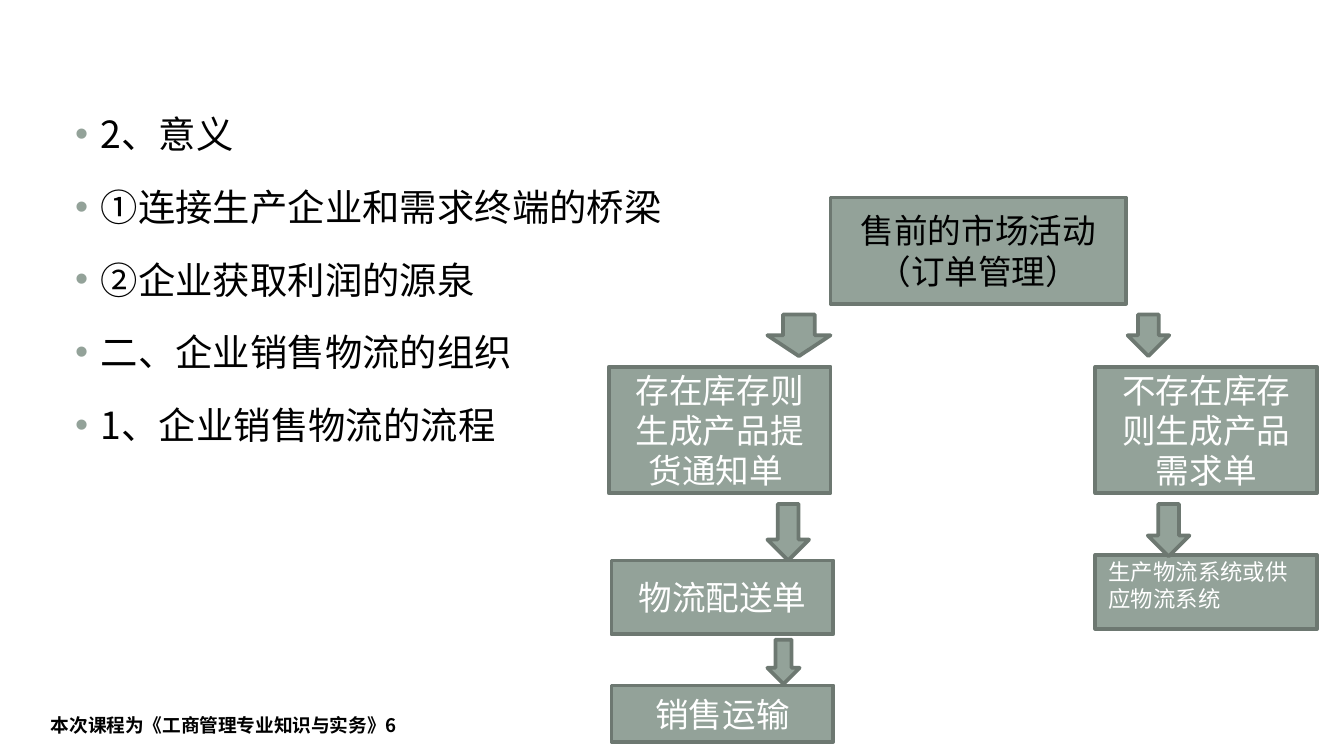
from dataclasses import dataclass

import lxml.etree
import pptx
import pptx.dml.color
import pptx.enum.shapes
import pptx.enum.text
import pptx.oxml.ns
import pptx.util

Inches = pptx.util.Inches
Pt = pptx.util.Pt
RGBColor = pptx.dml.color.RGBColor
MSO_SHAPE = pptx.enum.shapes.MSO_SHAPE
PP_ALIGN = pptx.enum.text.PP_ALIGN
MSO_ANCHOR = pptx.enum.text.MSO_ANCHOR
MSO_AUTO_SIZE = pptx.enum.text.MSO_AUTO_SIZE
qn = pptx.oxml.ns.qn

SAGE = RGBColor(0x93, 0xA2, 0x99)
DARK_SAGE = RGBColor(0x6D, 0x78, 0x71)
BLACK = RGBColor(0, 0, 0)
WHITE = RGBColor(0xFF, 0xFF, 0xFF)
BODY_FONT = "Noto Sans CJK SC"
FLOW_FONT = "League Spartan"
STEP_WIDTH = 1.65
RIGHT_COLUMN = 8.15


@dataclass
class Step:
    text: str
    left: float
    top: float
    height: float
    width: float = STEP_WIDTH
    size: int = 18
    font: str = FLOW_FONT
    color: RGBColor = WHITE
    align: PP_ALIGN = PP_ALIGN.CENTER
    bottom_margin: float = 0.05


@dataclass
class Arrow:
    left: float
    top: float
    width: float
    height: float


POINTS = [
    "2、意义",
    "①连接生产企业和需求终端的桥梁",
    "②企业获取利润的源泉",
    "二、企业销售物流的组织",
    "1、企业销售物流的流程",
]

STEPS = [
    Step("售前的市场活动（订单管理）", 6.18, 1.47, 0.79, width=2.2,
         font=BODY_FONT, color=BLACK),
    Step("存在库存则生成产品提货通知单 ", 4.53, 2.73, 0.94),
    Step("不存在库存则生成产品需求单", RIGHT_COLUMN, 2.73, 0.94),
    Step("物流配送单", 4.55, 4.17, 0.55),
    Step("生产物流系统或供应物流系统", RIGHT_COLUMN, 4.13, 0.55, size=12,
         align=PP_ALIGN.LEFT, bottom_margin=0.15),
    Step("销售运输", 4.55, 5.1, 0.42),
]

ARROWS = [
    Arrow(5.71, 2.34, 0.47, 0.31),
    Arrow(8.39, 2.34, 0.31, 0.31),
    Arrow(5.71, 3.75, 0.31, 0.42),
    Arrow(8.54, 3.75, 0.31, 0.39),
    Arrow(5.71, 4.76, 0.24, 0.33),
]


def style_text(paragraph, font: str, size: int, color: RGBColor,
               bold: bool = False) -> None:
    for run in paragraph.runs:
        run.font.name = font
        run.font.size = Pt(size)
        run.font.color.rgb = color
        run.font.bold = bold


def add_bullet(paragraph) -> None:
    properties = paragraph._p.get_or_add_pPr()
    properties.set("marL", str(Inches(0.28)))
    properties.set("indent", str(Inches(-0.19)))
    bullet_color = lxml.etree.SubElement(properties, qn("a:buClr"))
    lxml.etree.SubElement(bullet_color, qn("a:srgbClr"), val=str(SAGE))
    lxml.etree.SubElement(properties, qn("a:buFont"), typeface="Arial")
    lxml.etree.SubElement(properties, qn("a:buChar"), char="•")


def fill_points(body) -> None:
    body.left, body.top = Inches(0.37), Inches(0.61)
    body.width, body.height = Inches(9.63), Inches(4.41)
    frame = body.text_frame
    frame.text = "\n".join(POINTS)
    frame.auto_size = MSO_AUTO_SIZE.NONE
    frame.vertical_anchor = MSO_ANCHOR.TOP
    for paragraph in frame.paragraphs:
        paragraph.line_spacing = 1.5
        paragraph.space_before = Pt(3)
        add_bullet(paragraph)
        style_text(paragraph, BODY_FONT, 20, BLACK)


def add_flow_shape(slide, kind: MSO_SHAPE, part: Step | Arrow):
    shape = slide.shapes.add_shape(
        kind, Inches(part.left), Inches(part.top),
        Inches(part.width), Inches(part.height))
    shape.shadow.inherit = False
    shape.fill.solid()
    shape.fill.fore_color.rgb = SAGE
    shape.line.color.rgb = DARK_SAGE
    shape.line.width = Pt(2)
    return shape


def add_step(slide, step: Step) -> None:
    frame = add_flow_shape(slide, MSO_SHAPE.RECTANGLE, step).text_frame
    frame.text = step.text
    frame.word_wrap = True
    frame.vertical_anchor = MSO_ANCHOR.MIDDLE
    frame.margin_bottom = Inches(step.bottom_margin)
    paragraph = frame.paragraphs[0]
    paragraph.alignment = step.align
    style_text(paragraph, step.font, step.size, step.color)


def add_footer(slide) -> None:
    footer = slide.shapes.add_textbox(
        Inches(0.28), Inches(5.26), Inches(6.31), Inches(0.27))
    footer.text_frame.word_wrap = True
    footer.text_frame.text = "本次课程为《工商管理专业知识与实务》6"
    style_text(footer.text_frame.paragraphs[0], BODY_FONT, 10, BLACK, bold=True)


def main() -> None:
    presentation = pptx.Presentation()
    presentation.slide_width = Inches(10)
    presentation.slide_height = Inches(10 * 9 / 16)
    slide = presentation.slides.add_slide(presentation.slide_layouts[1])
    empty_title = slide.shapes.title.element
    empty_title.getparent().remove(empty_title)
    add_footer(slide)
    fill_points(slide.placeholders[1])
    for step in STEPS:
        add_step(slide, step)
    for arrow in ARROWS:
        add_flow_shape(slide, MSO_SHAPE.DOWN_ARROW, arrow)
    presentation.save("out.pptx")


if __name__ == "__main__":
    main()
